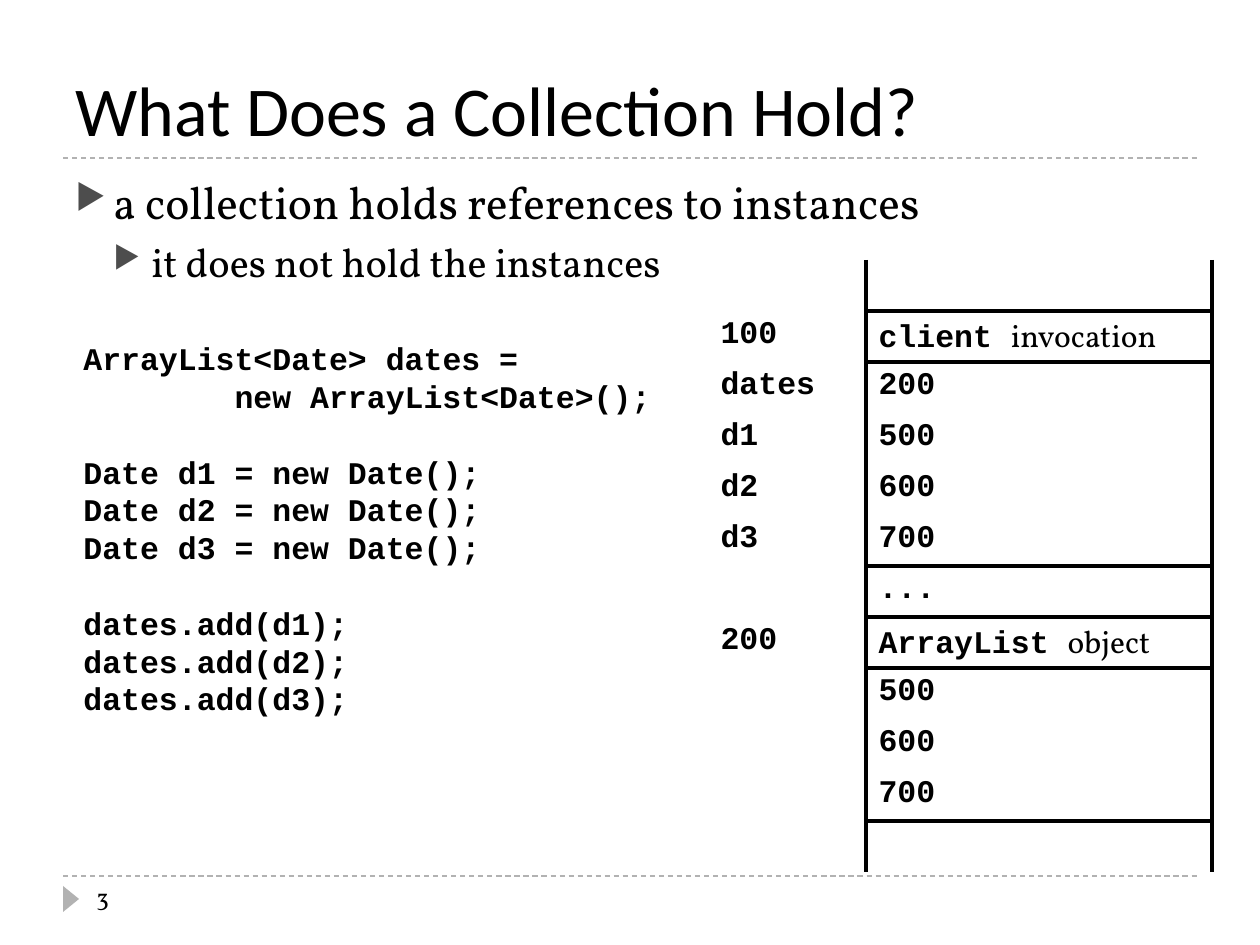
"""Builds the slide on what a collection holds, with code and a memory table."""
from dataclasses import dataclass
from lxml.etree import SubElement
from pptx import Presentation
from pptx.dml.color import RGBColor
from pptx.enum.dml import MSO_LINE
from pptx.enum.shapes import MSO_CONNECTOR, MSO_SHAPE
from pptx.enum.text import MSO_ANCHOR
from pptx.oxml.ns import qn
from pptx.util import Emu, Pt


@dataclass(frozen=True)
class Theme:
    ink: str = "000000"
    rule: str = "B2B2B2"
    mark: str = "4D4D4D"
    head: str = "Calibri"
    body: str = "Vollkorn"
    code: str = "Courier New"
    title: int = 40
    main: int = 26
    sub: int = 23
    small: int = 18
    page: int = 14
    thin: float = 0.75
    thick: float = 2.25


T = Theme()
TITLE = "What Does a Collection Hold?"
POINTS = [
    ("a collection holds references to instances", T.main, 6),
    ("it does not hold the instances", T.sub, 5),
]
CODE = [
    [("ArrayList<Date> dates =", 0), ("new ArrayList<Date>();", 8)],
    [("Date d1 = new Date();", 0), ("Date d2 = new Date();", 0),
     ("Date d3 = new Date();", 0)],
    [("dates.add(d1);", 0), ("dates.add(d2);", 0), ("dates.add(d3);", 0)],
]
MEMORY = [
    ("", "", ""),
    ("100", "client ", "invocation"),
    ("dates", "200", ""),
    ("d1", "500", ""),
    ("d2", "600", ""),
    ("d3", "700", ""),
    ("", "...", ""),
    ("200", "ArrayList ", "object"),
    ("", "500", ""),
    ("", "600", ""),
    ("", "700", ""),
    ("", "", ""),
]
RULED = {0, 1, 5, 6, 7, 10}
COLS = (158, 346)
ROW = 51
INDENT = 38
CHAR = 0.6 * T.small
LINE = 1.2 * T.small


def px(n):
    return Emu(round(n * 914400 / 126))


def rgb(code):
    return RGBColor.from_string(code)


def say(para, text, font=T.code, size=T.small, bold=False):
    run = para.add_run()
    run.text = text
    run.font.name = font
    run.font.size = Pt(size)
    run.font.bold = bold
    run.font.color.rgb = rgb(T.ink)


def box(slide, x, y, w, h, wrap=True, anchor=MSO_ANCHOR.TOP):
    frame = slide.shapes.add_textbox(px(x), px(y), px(w), px(h)).text_frame
    frame.word_wrap = wrap
    frame.vertical_anchor = anchor
    return frame


def lines(frame):
    yield frame.paragraphs[0]
    while True:
        yield frame.add_paragraph()


def bullet(para, level):
    props = para._p.get_or_add_pPr()
    props.set("marL", str(px(INDENT * (level + 1))))
    props.set("indent", str(-px(INDENT)))
    tint = SubElement(props, qn("a:buClr"))
    SubElement(tint, qn("a:srgbClr"), val=T.mark)
    SubElement(props, qn("a:buSzPct"), val="76000")
    SubElement(props, qn("a:buChar"), char="▶")


def border(cell, sides):
    props = cell._tc.get_or_add_tcPr()
    for side in "LRTB":
        edge = SubElement(props, qn("a:ln" + side), w=str(Pt(T.thick)))
        if side in sides:
            fill = SubElement(edge, qn("a:solidFill"))
            SubElement(fill, qn("a:srgbClr"), val=T.ink)
        else:
            SubElement(edge, qn("a:noFill"))
    cell.fill.background()


def rule(slide, y):
    line = slide.shapes.add_connector(
        MSO_CONNECTOR.STRAIGHT, px(63), px(y), px(1197), px(y))
    line.line.color.rgb = rgb(T.rule)
    line.line.width = Pt(T.thin)
    line.line.dash_style = MSO_LINE.DASH
    SubElement(line._element.spPr, qn("a:effectLst"))


def frame_up(slide):
    for y in (876, 158):
        rule(slide, y)
    mark = slide.shapes.add_shape(
        MSO_SHAPE.ISOSCELES_TRIANGLE, px(58), px(891), px(26), px(16))
    mark.rotation = 90
    mark.shadow.inherit = False
    mark.fill.solid()
    mark.fill.fore_color.rgb = rgb(T.rule)
    mark.line.fill.background()
    title = box(slide, 63, 21, 1134, 136, anchor=MSO_ANCHOR.BOTTOM)
    say(title.paragraphs[0], TITLE, font=T.head, size=T.title)
    page = box(slide, 84, 876, 273, 50)
    say(page.paragraphs[0], "3", font=T.body, size=T.page)


def points(slide):
    paras = lines(box(slide, 63, 168, 1134, 680))
    for level, (text, size, gap) in enumerate(POINTS):
        para = next(paras)
        para.level = level
        para.space_before = Pt(gap)
        bullet(para, level)
        say(para, text, font=T.body, size=size)


def code(slide):
    paras = lines(box(slide, 71, 333, 596, 394, wrap=False))
    for group, block in enumerate(CODE):
        for row, (text, tab) in enumerate(block):
            para = next(paras)
            if group and not row:
                para.space_before = Pt(LINE)
            if tab:
                para._p.get_or_add_pPr().set("marL", str(Pt(tab * CHAR)))
            say(para, text, bold=True)


def memory(slide):
    table = slide.shapes.add_table(
        len(MEMORY), len(COLS), px(708), px(260),
        px(sum(COLS)), px(ROW * len(MEMORY))).table
    table.first_row = table.horz_banding = False
    for col, wide in zip(table.columns, COLS):
        col.width = px(wide)
    for at, (name, value, note) in enumerate(MEMORY):
        table.rows[at].height = px(ROW)
        left, right = table.cell(at, 0), table.cell(at, 1)
        border(left, "R")
        border(right, "LR" + "T" * (at - 1 in RULED) + "B" * (at in RULED))
        for cell, text in ((left, name), (right, value)):
            if text:
                say(cell.text_frame.paragraphs[0], text, bold=True)
        if note:
            say(right.text_frame.paragraphs[0], note, font=T.body)


def main():
    deck = Presentation()
    deck.slide_width, deck.slide_height = px(1260), px(945)
    slide = deck.slides.add_slide(deck.slide_layouts[6])
    for part in (frame_up, points, code, memory):
        part(slide)
    deck.save("out.pptx")


if __name__ == "__main__":
    main()
